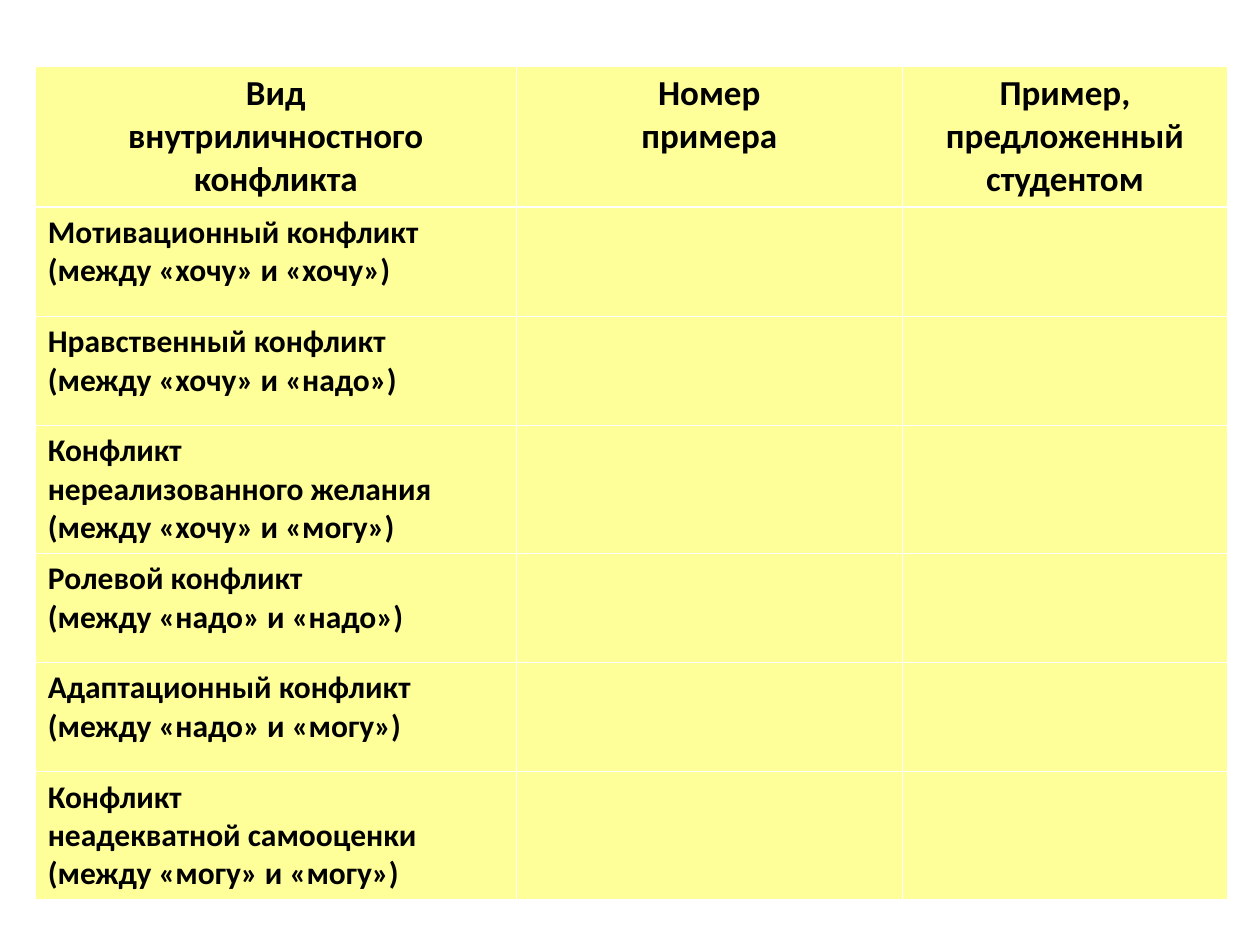
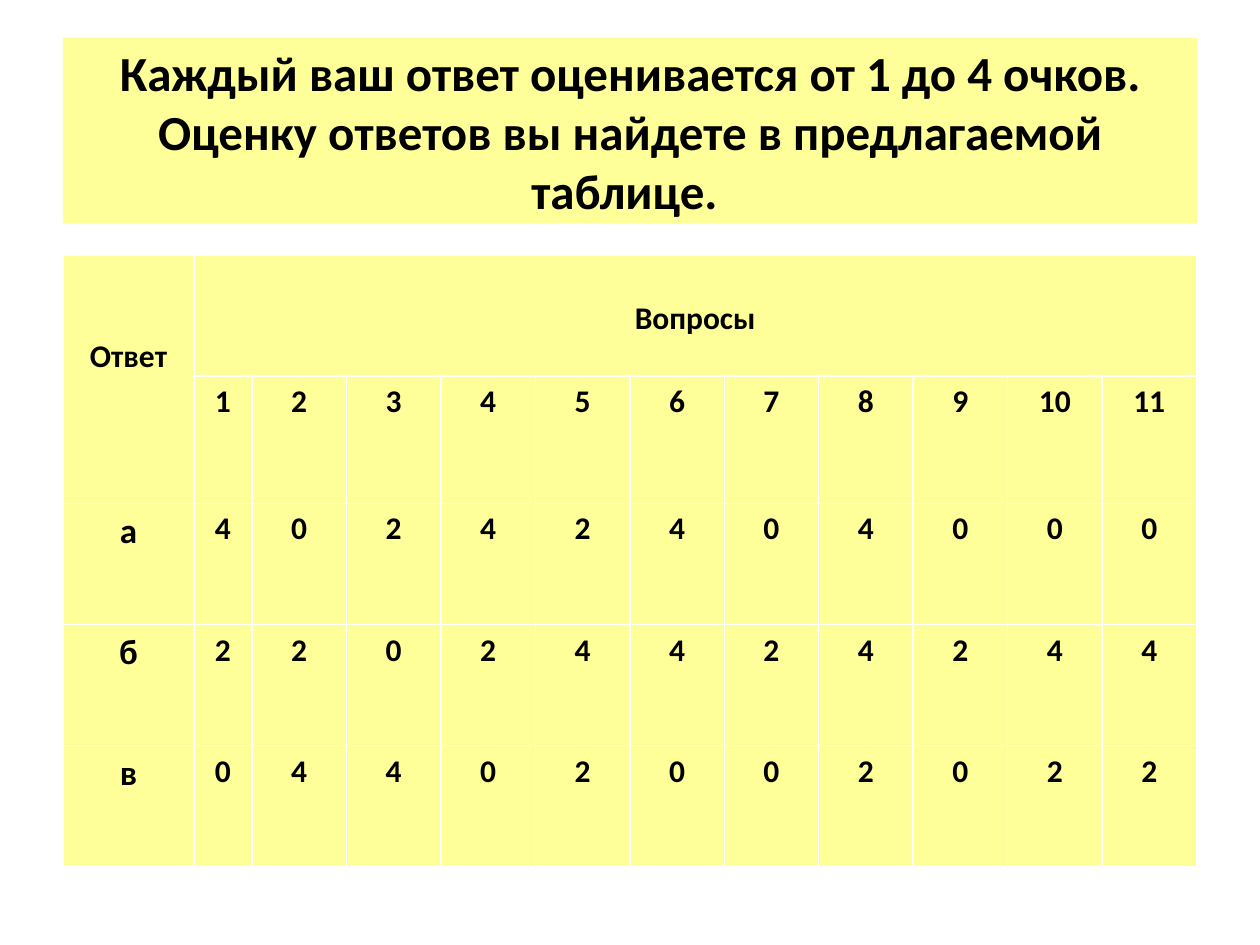
import pptx
import pptx.dml.color
import pptx.enum.shapes
import pptx.enum.text
import pptx.util

Cm = pptx.util.Cm
Pt = pptx.util.Pt
RGBColor = pptx.dml.color.RGBColor
Align = pptx.enum.text.PP_ALIGN

PALE_YELLOW = RGBColor(0xFF, 0xFF, 0x99)
BLACK = RGBColor(0x00, 0x00, 0x00)
FONT = "Calibri"
TITLE_SIZE, LARGE_SIZE, BODY_SIZE = 28, 20, 18

CONFLICT_HEADERS = [
    ["Вид", "внутриличностного конфликта"],
    ["Номер", "примера"],
    ["Пример,", "предложенный студентом"],
]
CONFLICTS = [
    ["Мотивационный конфликт", "(между «хочу» и «хочу»)"],
    ["Нравственный конфликт", "(между «хочу» и «надо»)"],
    ["Конфликт", "нереализованного желания", "(между «хочу» и «могу»)"],
    ["Ролевой конфликт", "(между «надо» и «надо»)"],
    ["Адаптационный конфликт", "(между «надо» и «могу»)"],
    ["Конфликт", "неадекватной самооценки", "(между «могу» и «могу»)"],
]
CONFLICT_WIDTHS = [9.7, 7.78, 6.56]

SCORE_TITLE = ("Каждый ваш ответ оценивается от 1 до 4 очков. "
               "Оценку ответов вы найдете в предлагаемой таблице. ")
ANSWER_HEADER, QUESTION_HEADER = "Ответ", "Вопросы"
SCORES = {
    "а": [4, 0, 2, 4, 2, 4, 0, 4, 0, 0, 0],
    "б": [2, 2, 0, 2, 4, 4, 2, 4, 2, 4, 4],
    "в": [0, 4, 4, 0, 2, 0, 0, 2, 0, 2, 2],
}
QUESTION_COUNT = 11
SCORE_LEFT, SCORE_WIDTH = 1.27, 22.86
ANSWER_WIDTH, FIRST_QUESTION_WIDTH = 2.64, 1.17
QUESTION_WIDTH = (SCORE_WIDTH - ANSWER_WIDTH - FIRST_QUESTION_WIDTH) / (QUESTION_COUNT - 1)
CELL_MARGIN, LINE_HEIGHT = 0.13, 0.77


def write(text_frame, lines, size, alignment=Align.CENTER):
    for index, line in enumerate(lines):
        paragraph = text_frame.add_paragraph() if index else text_frame.paragraphs[0]
        paragraph.alignment = alignment
        run = paragraph.add_run()
        run.text = line
        run.font.name = FONT
        run.font.size = Pt(size)
        run.font.bold = True
        run.font.color.rgb = BLACK


def add_yellow_table(slide, left, top, widths, row_count, row_height):
    """The default table style supplies the white rules; every cell is filled."""
    table = slide.shapes.add_table(
        row_count, len(widths), Cm(left), Cm(top),
        Cm(sum(widths)), Cm(row_height * row_count)).table
    for column, width in zip(table.columns, widths):
        column.width = Cm(width)
    for row in table.rows:
        row.height = Cm(row_height)
        for cell in row.cells:
            cell.fill.solid()
            cell.fill.fore_color.rgb = PALE_YELLOW
    return table


def build_conflict_slide(slide):
    table = add_yellow_table(slide, 0.71, 1.33, CONFLICT_WIDTHS, len(CONFLICTS) + 1, 2.2)
    for column, lines in enumerate(CONFLICT_HEADERS):
        write(table.cell(0, column).text_frame, lines, LARGE_SIZE)
    for row, lines in enumerate(CONFLICTS, start=1):
        write(table.cell(row, 0).text_frame, lines, BODY_SIZE, Align.JUSTIFY)


def add_title(slide, text):
    title = slide.shapes.add_shape(
        pptx.enum.shapes.MSO_SHAPE.RECTANGLE,
        Cm(SCORE_LEFT), Cm(0.76), Cm(SCORE_WIDTH), Cm(3.75))
    title.shadow.inherit = False
    title.fill.solid()
    title.fill.fore_color.rgb = PALE_YELLOW
    title.line.fill.background()
    title.text_frame.word_wrap = True
    title.text_frame.vertical_anchor = pptx.enum.text.MSO_ANCHOR.MIDDLE
    write(title.text_frame, [text], TITLE_SIZE)


def write_lowered(cell, text, line_count):
    """Write a header that starts some lines below the top of its cell."""
    cell.margin_top = Cm(CELL_MARGIN + line_count * LINE_HEIGHT)
    write(cell.text_frame, [text], BODY_SIZE)


def build_score_slide(slide):
    add_title(slide, SCORE_TITLE)
    widths = [ANSWER_WIDTH, FIRST_QUESTION_WIDTH] + [QUESTION_WIDTH] * (QUESTION_COUNT - 1)
    table = add_yellow_table(slide, SCORE_LEFT, 5.14, widths, len(SCORES) + 2, 2.44)
    table.cell(0, 0).merge(table.cell(1, 0))
    table.cell(0, 1).merge(table.cell(0, QUESTION_COUNT))
    write_lowered(table.cell(0, 0), ANSWER_HEADER, 2)
    write_lowered(table.cell(0, 1), QUESTION_HEADER, 1)
    number_rows = [range(1, QUESTION_COUNT + 1), *SCORES.values()]
    for row, numbers in enumerate(number_rows, start=1):
        for column, number in enumerate(numbers, start=1):
            write(table.cell(row, column).text_frame, [str(number)], BODY_SIZE)
    for row, answer in enumerate(SCORES, start=2):
        write(table.cell(row, 0).text_frame, [answer], LARGE_SIZE)


def main():
    presentation = pptx.Presentation()
    presentation.slide_width = Cm(25.4)
    presentation.slide_height = Cm(19.05)
    blank_layout = presentation.slide_layouts[6]
    for build_slide in (build_conflict_slide, build_score_slide):
        build_slide(presentation.slides.add_slide(blank_layout))
    presentation.save("out.pptx")


if __name__ == "__main__":
    main()
